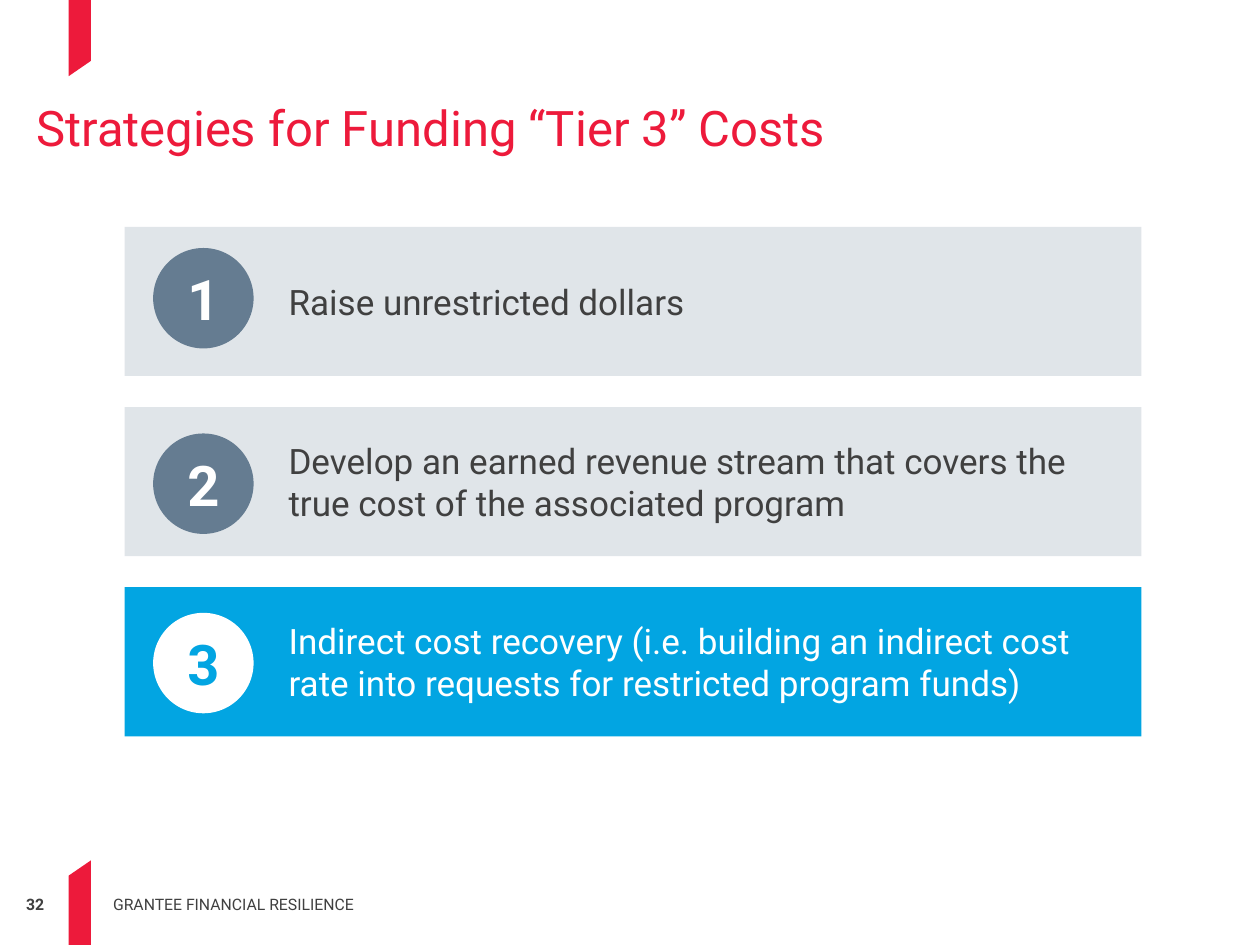
from dataclasses import dataclass

from pptx import Presentation
from pptx.dml.color import RGBColor
from pptx.enum.shapes import MSO_SHAPE as Preset
from pptx.enum.text import MSO_ANCHOR as Anchor, PP_ALIGN as Align
from pptx.util import Pt


@dataclass(frozen=True)
class Theme:
    font: str = "Roboto"
    red: str = "ED1A3B"
    dark: str = "404040"
    slate: str = "657C91"
    pale: str = "E0E5E9"
    blue: str = "02A5E2"
    white: str = "FFFFFF"
    title_size: float = 28
    number_size: float = 32
    body_size: float = 20
    footer_size: float = 9


@dataclass(frozen=True)
class Box:
    left: float
    top: float
    width: float
    height: float

    def lengths(self) -> tuple:
        return tuple(Pt(v) for v in (self.left, self.top, self.width, self.height))


@dataclass(frozen=True)
class TextStyle:
    size: float
    color: str
    bold: bool = False
    align: Align = Align.LEFT
    anchor: Anchor = Anchor.TOP
    insets: tuple = (0, 0, 0, 0)
    line_spacing: float = 1.0


@dataclass(frozen=True)
class Strategy:
    text: str
    badge_top: float
    bar_fill: str
    text_color: str
    badge_fill: str
    number_color: str


THEME = Theme()
BAR = Box(71.3, 129.6, 581, 85.2)
BAR_PITCH = 103
BAR_INSETS = (93.6, 14.4, 21.6, 14.4)
BADGE_LEFT, BADGE_SIZE = 87.5, 57.4
RIBBON_LEFT, RIBBON_RIGHT = 39.2, 52

QUIET = (THEME.pale, THEME.dark, THEME.slate, THEME.white)
HIGHLIGHT = (THEME.blue, THEME.white, THEME.white, THEME.blue)
STRATEGIES = [
    Strategy("Raise unrestricted dollars", 141.7, *QUIET),
    Strategy("Develop an earned revenue stream that covers the true cost "
             "of the associated program", 247.7, *QUIET),
    Strategy("Indirect cost recovery (i.e. building an indirect cost rate "
             "into requests for restricted program funds)", 350.2, *HIGHLIGHT),
]


def paint(shape, color: str) -> None:
    shape.shadow.inherit = False
    shape.fill.solid()
    shape.fill.fore_color.rgb = RGBColor.from_string(color)
    shape.line.fill.background()


def write(shape, text: str, style: TextStyle) -> None:
    frame = shape.text_frame
    frame.text = text
    frame.word_wrap = True
    frame.vertical_anchor = style.anchor
    (frame.margin_left, frame.margin_top,
     frame.margin_right, frame.margin_bottom) = map(Pt, style.insets)
    para = frame.paragraphs[0]
    para.alignment = style.align
    para.line_spacing = style.line_spacing
    font = para.runs[0].font
    font.name = THEME.font
    font.size = Pt(style.size)
    font.bold = style.bold
    font.color.rgb = RGBColor.from_string(style.color)


def add_text(page, box: Box, text: str, style: TextStyle) -> None:
    write(page.shapes.add_textbox(*box.lengths()), text, style)


def add_block(page, preset: Preset, box: Box, fill: str,
              text: str, style: TextStyle) -> None:
    shape = page.shapes.add_shape(preset, *box.lengths())
    paint(shape, fill)
    write(shape, text, style)


def add_ribbon(page, edge: float, left_end: float, right_end: float) -> None:
    """Draw a red strip from a slide edge to a slanted end."""
    corners = [(RIBBON_RIGHT, edge), (RIBBON_RIGHT, right_end),
               (RIBBON_LEFT, left_end)]
    builder = page.shapes.build_freeform(Pt(RIBBON_LEFT), Pt(edge))
    builder.add_line_segments([(Pt(x), Pt(y)) for x, y in corners], close=True)
    paint(builder.convert_to_shape(), THEME.red)


def add_strategy(page, index: int, item: Strategy) -> None:
    bar = Box(BAR.left, BAR.top + index * BAR_PITCH, BAR.width, BAR.height)
    badge = Box(BADGE_LEFT, item.badge_top, BADGE_SIZE, BADGE_SIZE)
    add_block(page, Preset.RECTANGLE, bar, item.bar_fill, item.text,
              TextStyle(THEME.body_size, item.text_color,
                        anchor=Anchor.MIDDLE, insets=BAR_INSETS))
    add_block(page, Preset.OVAL, badge, item.badge_fill, str(index + 1),
              TextStyle(THEME.number_size, item.number_color, bold=True,
                        align=Align.CENTER, anchor=Anchor.MIDDLE))


def main() -> None:
    deck = Presentation()
    deck.slide_width, deck.slide_height = Pt(720), Pt(540)
    page = deck.slides.add_slide(deck.slide_layouts[6])

    add_ribbon(page, edge=0, left_end=43.6, right_end=34.8)
    add_ribbon(page, edge=540, left_end=500.4, right_end=491.6)
    add_text(page, Box(0, 511.2, 25.2, 10.8), "32",
             TextStyle(THEME.footer_size, THEME.dark, bold=True, align=Align.RIGHT))
    add_text(page, Box(64.6, 500.4, 250, 21.6), "GRANTEE FINANCIAL RESILIENCE",
             TextStyle(THEME.footer_size, THEME.dark, anchor=Anchor.BOTTOM))
    add_text(page, Box(20.8, 54, 549.4, 75.6), "Strategies for Funding “Tier 3” Costs",
             TextStyle(THEME.title_size, THEME.red, line_spacing=1.05))
    for index, item in enumerate(STRATEGIES):
        add_strategy(page, index, item)

    deck.save("out.pptx")


if __name__ == "__main__":
    main()
